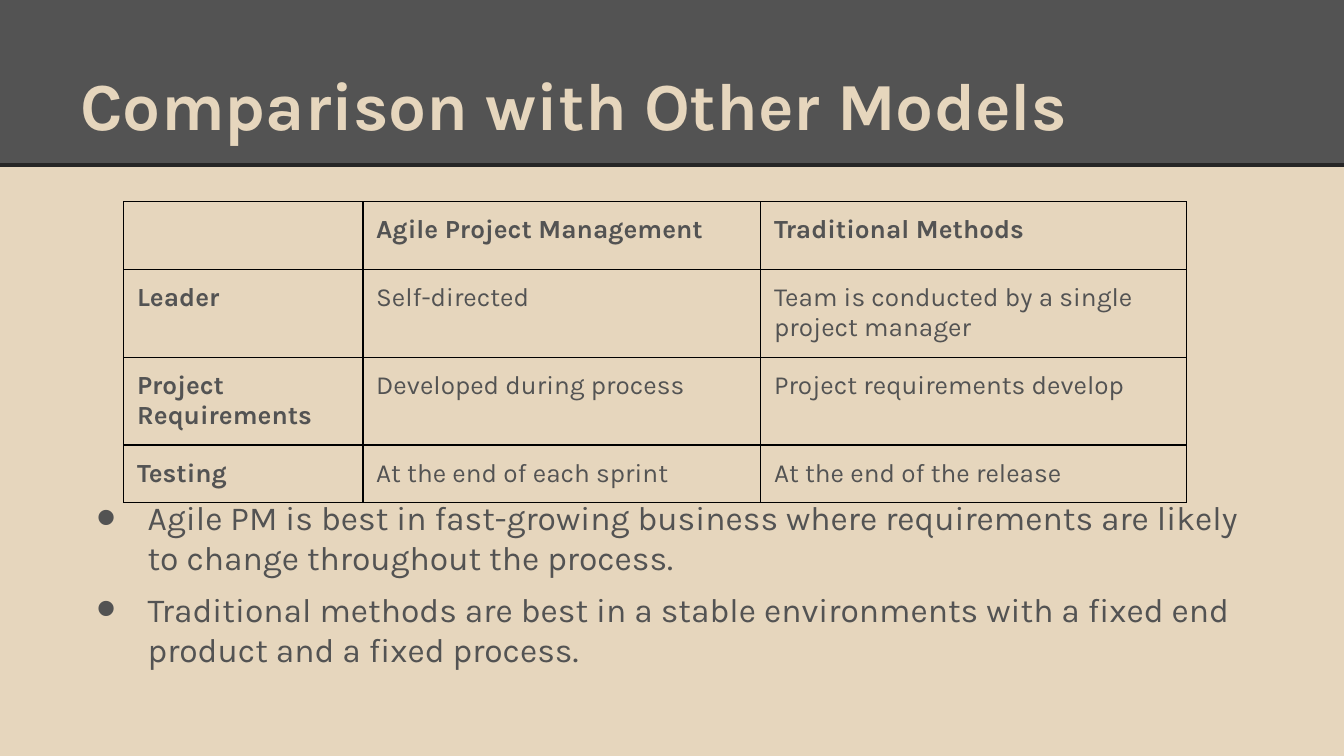
from lxml import etree
from pptx import Presentation
from pptx.dml.color import RGBColor
from pptx.enum import shapes, text
from pptx.oxml import ns
from pptx.util import Cm, Pt

TITLE = "Comparison with Other Models"
COMPARISON = [
    ("", "Agile Project Management", "Traditional Methods"),
    ("Leader", "Self-directed", "Team is conducted by a single project manager"),
    ("Project Requirements", "Developed during process", "Project requirements develop"),
    ("Testing", "At the end of each sprint", "At the end of the release"),
]
CONCLUSIONS = [
    "Agile PM is best in fast-growing business where requirements are likely "
    "to change throughout the process.",
    "Traditional methods are best in a stable environments with a fixed end "
    "product and a fixed process.",
]


class Theme:
    font = "Karla"
    sand, gray, dark, black = "E6D6BD", "535353", "262626", "000000"
    title_size, body_size, table_size = 36, 18, 14
    rule_width, border_width = 2.25, 0.75


SLIDE_WIDTH, SLIDE_HEIGHT = 25.4, 14.28
BAND_HEIGHT = 3.12
MARGIN, INSET = 1.27, 0.25
BODY_TOP, BODY_HEIGHT = 3.33, 10.34
TABLE_LEFT, TABLE_TOP = 2.34, 3.81
COLUMN_WIDTHS = (4.52, 7.52, 8.05)
ROW_HEIGHTS = (1.09, 1.66, 1.66, 1.09)
TABLE_CLEARANCE = 6.05  # keeps the body text below the table


def color(value):
    return RGBColor.from_string(value)


def add_run(paragraph, words, size, rgb, bold=False):
    run = paragraph.add_run()
    run.text = words
    run.font.name = Theme.font
    run.font.size = Pt(size)
    run.font.bold = bold
    run.font.color.rgb = color(rgb)


def place(shape, left, top, width, height):
    shape.left, shape.top = Cm(left), Cm(top)
    shape.width, shape.height = Cm(width), Cm(height)


def set_insets(target):
    """Give a text frame or a table cell the same inset on every side."""
    for side in ("left", "right", "top", "bottom"):
        setattr(target, f"margin_{side}", Cm(INSET))


def add_child(parent, tag, **attributes):
    return etree.SubElement(parent, ns.qn(tag), attributes)


def add_header(slide):
    title = slide.shapes.title
    band = slide.shapes.add_shape(
        shapes.MSO_SHAPE.RECTANGLE, 0, 0, Cm(SLIDE_WIDTH), Cm(BAND_HEIGHT))
    band.shadow.inherit = False
    band.fill.solid()
    band.fill.fore_color.rgb = color(Theme.gray)
    band.line.fill.background()

    rule = slide.shapes.add_connector(
        shapes.MSO_CONNECTOR.STRAIGHT, 0, Cm(BAND_HEIGHT), Cm(SLIDE_WIDTH), Cm(BAND_HEIGHT))
    rule.line.color.rgb = color(Theme.dark)
    rule.line.width = Pt(Theme.rule_width)
    add_child(rule.element.spPr, "a:effectLst")

    for shape in (band, rule):
        title.element.addprevious(shape.element)

    place(title, MARGIN, 0.58, SLIDE_WIDTH - 2 * MARGIN, 2.39)
    frame = title.text_frame
    set_insets(frame)
    frame.auto_size = text.MSO_AUTO_SIZE.NONE
    frame.vertical_anchor = text.MSO_ANCHOR.BOTTOM
    paragraph = frame.paragraphs[0]
    paragraph.alignment = text.PP_ALIGN.LEFT
    add_run(paragraph, TITLE, Theme.title_size, Theme.sand, bold=True)


def set_bullet(paragraph):
    properties = paragraph._p.get_or_add_pPr()
    properties.set("marL", str(Cm(1.27)))
    properties.set("indent", str(-Cm(0.97)))
    bullet_color = add_child(properties, "a:buClr")
    add_child(bullet_color, "a:srgbClr", val=Theme.gray)
    add_child(properties, "a:buSzPct", val="167000")
    add_child(properties, "a:buChar", char="•")


def fill_body(body):
    place(body, MARGIN, BODY_TOP, SLIDE_WIDTH - 2 * MARGIN, BODY_HEIGHT)
    frame = body.text_frame
    set_insets(frame)
    frame.margin_top = Cm(TABLE_CLEARANCE)
    frame.auto_size = text.MSO_AUTO_SIZE.NONE
    frame.vertical_anchor = text.MSO_ANCHOR.TOP
    for index, conclusion in enumerate(CONCLUSIONS):
        paragraph = frame.add_paragraph() if index else frame.paragraphs[0]
        paragraph.space_before = Pt(6)
        set_bullet(paragraph)
        add_run(paragraph, conclusion, Theme.body_size, Theme.gray)


def set_borders(cell):
    properties = cell._tc.get_or_add_tcPr()
    for tag in ("a:lnL", "a:lnR", "a:lnT", "a:lnB"):
        line = add_child(properties, tag, w=str(Pt(Theme.border_width)))
        fill = add_child(line, "a:solidFill")
        add_child(fill, "a:srgbClr", val=Theme.black)


def add_comparison(slide):
    table = slide.shapes.add_table(
        len(ROW_HEIGHTS), len(COLUMN_WIDTHS), Cm(TABLE_LEFT), Cm(TABLE_TOP),
        Cm(sum(COLUMN_WIDTHS)), Cm(sum(ROW_HEIGHTS))).table
    table.horz_banding = False
    for column, width in zip(table.columns, COLUMN_WIDTHS):
        column.width = Cm(width)
    for row, height in zip(table.rows, ROW_HEIGHTS):
        row.height = Cm(height)
    for row_index, entries in enumerate(COMPARISON):
        for column_index, words in enumerate(entries):
            cell = table.cell(row_index, column_index)
            set_insets(cell)
            set_borders(cell)
            cell.fill.background()
            if words:
                is_heading = row_index == 0 or column_index == 0
                add_run(cell.text_frame.paragraphs[0], words,
                        Theme.table_size, Theme.gray, is_heading)


def main():
    presentation = Presentation()
    presentation.slide_width = Cm(SLIDE_WIDTH)
    presentation.slide_height = Cm(SLIDE_HEIGHT)
    slide = presentation.slides.add_slide(presentation.slide_layouts[1])
    slide.background.fill.solid()
    slide.background.fill.fore_color.rgb = color(Theme.sand)
    add_header(slide)
    fill_body(slide.placeholders[1])
    add_comparison(slide)
    presentation.save("out.pptx")


if __name__ == "__main__":
    main()
